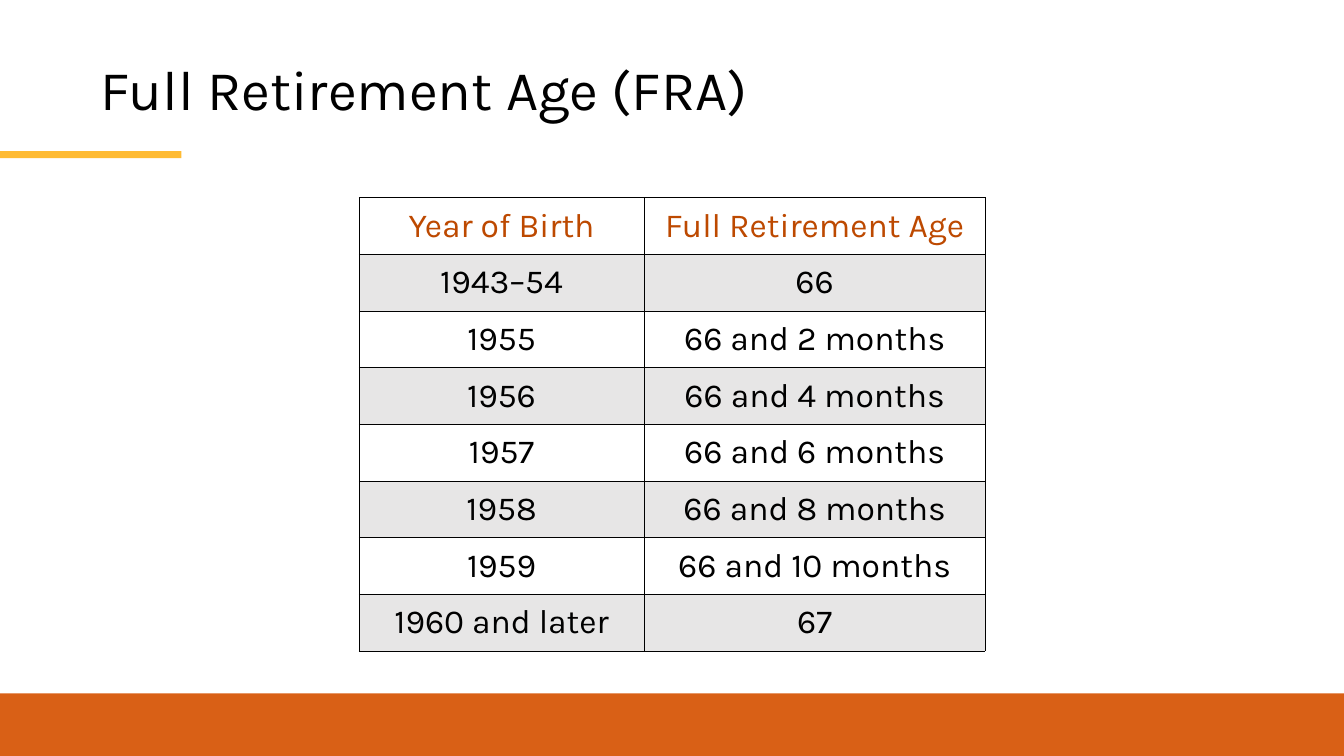
from lxml.etree import SubElement
from pptx import Presentation
from pptx.dml.color import RGBColor
from pptx.enum.shapes import MSO_SHAPE
from pptx.enum.text import MSO_ANCHOR, PP_ALIGN
from pptx.oxml.ns import qn
from pptx.util import Inches, Pt

BLACK = RGBColor(0x00, 0x00, 0x00)
WHITE = RGBColor(0xFF, 0xFF, 0xFF)
STRIPE_GREY = RGBColor(0xE7, 0xE6, 0xE6)
HEADING_RUST = RGBColor(0xBD, 0x49, 0x00)
FOOTER_ORANGE = RGBColor(0xD9, 0x60, 0x16)
ACCENT_YELLOW = RGBColor(0xFF, 0xBB, 0x33)
FONT = "Karla"
BORDER_WIDTH = Pt(0.25)

SLIDE_WIDTH, SLIDE_HEIGHT = 13.33, 7.5
BIRTH_YEAR_SHARE = 2.83 / 6.21
RETIREMENT_AGES = [
    ("Year of Birth", "Full Retirement Age"),
    ("1943–54", "66"),
    ("1955", "66 and 2 months"),
    ("1956", "66 and 4 months"),
    ("1957", "66 and 6 months"),
    ("1958", "66 and 8 months"),
    ("1959", "66 and 10 months"),
    ("1960 and later", "67"),
]


def add_run(paragraph, text, size, color):
    run = paragraph.add_run()
    run.text = text
    run.font.name = FONT
    run.font.size = Pt(size)
    run.font.color.rgb = color


def add_bar(slide, left, top, width, height, color):
    bar = slide.shapes.add_shape(
        MSO_SHAPE.RECTANGLE, Inches(left), Inches(top), Inches(width), Inches(height)
    )
    bar.shadow.inherit = False
    bar.fill.solid()
    bar.fill.fore_color.rgb = color
    bar.line.fill.background()


def add_title(slide, left, top, width, height, text):
    """Place the title with the yellow accent rule, which runs in from the slide edge."""
    title = slide.shapes.add_textbox(
        Inches(left), Inches(top), Inches(width), Inches(height)
    )
    frame = title.text_frame
    frame.word_wrap = True
    frame.vertical_anchor = MSO_ANCHOR.TOP
    frame.margin_left = frame.margin_right = frame.margin_bottom = 0
    frame.margin_top = Inches(0.17)
    frame.paragraphs[0].line_spacing = 0.9
    add_run(frame.paragraphs[0], text, 40, BLACK)
    add_bar(slide, 0, top + 1.05, left + 0.8, 0.07, ACCENT_YELLOW)


def add_cell_borders(cell):
    properties = cell._tc.get_or_add_tcPr()
    for side in ("a:lnL", "a:lnR", "a:lnT", "a:lnB"):
        border = SubElement(properties, qn(side), w=str(BORDER_WIDTH))
        border_fill = SubElement(border, qn("a:solidFill"))
        SubElement(border_fill, qn("a:srgbClr"), val=str(BLACK))


def fill_cell(cell, text, color, background, margins):
    add_cell_borders(cell)
    cell.fill.solid()
    cell.fill.fore_color.rgb = background
    cell.vertical_anchor = MSO_ANCHOR.MIDDLE
    side_margin, end_margin = margins
    cell.margin_left = cell.margin_right = Inches(side_margin)
    cell.margin_top = cell.margin_bottom = Inches(end_margin)
    paragraph = cell.text_frame.paragraphs[0]
    paragraph.alignment = PP_ALIGN.CENTER
    add_run(paragraph, text, 24, color)


def add_age_table(slide, left, top, width, height, entries):
    ages = slide.shapes.add_table(
        len(entries), 2, Inches(left), Inches(top), Inches(width), Inches(height)
    ).table
    ages.first_row = ages.horz_banding = False
    ages.columns[0].width = Inches(width * BIRTH_YEAR_SHARE)
    ages.columns[1].width = Inches(width * (1 - BIRTH_YEAR_SHARE))
    for row, (birth_year, age) in enumerate(entries):
        ages.rows[row].height = Inches(height / len(entries))
        color = BLACK if row else HEADING_RUST
        background = STRIPE_GREY if row % 2 else WHITE
        fill_cell(ages.cell(row, 0), birth_year, color, background, (0, 0))
        fill_cell(ages.cell(row, 1), age, color, background, (0.12, 0.06))


def main():
    deck = Presentation()
    deck.slide_width = Inches(SLIDE_WIDTH)
    deck.slide_height = Inches(SLIDE_HEIGHT)
    slide = deck.slides.add_slide(deck.slide_layouts[6])
    add_bar(slide, 0, 6.88, SLIDE_WIDTH, SLIDE_HEIGHT - 6.88, FOOTER_ORANGE)
    add_age_table(slide, 3.56, 1.96, 6.21, 4.5, RETIREMENT_AGES)
    add_title(slide, 1, 0.45, 11.47, 1.3, "Full Retirement Age (FRA)")
    deck.save("out.pptx")


if __name__ == "__main__":
    main()
